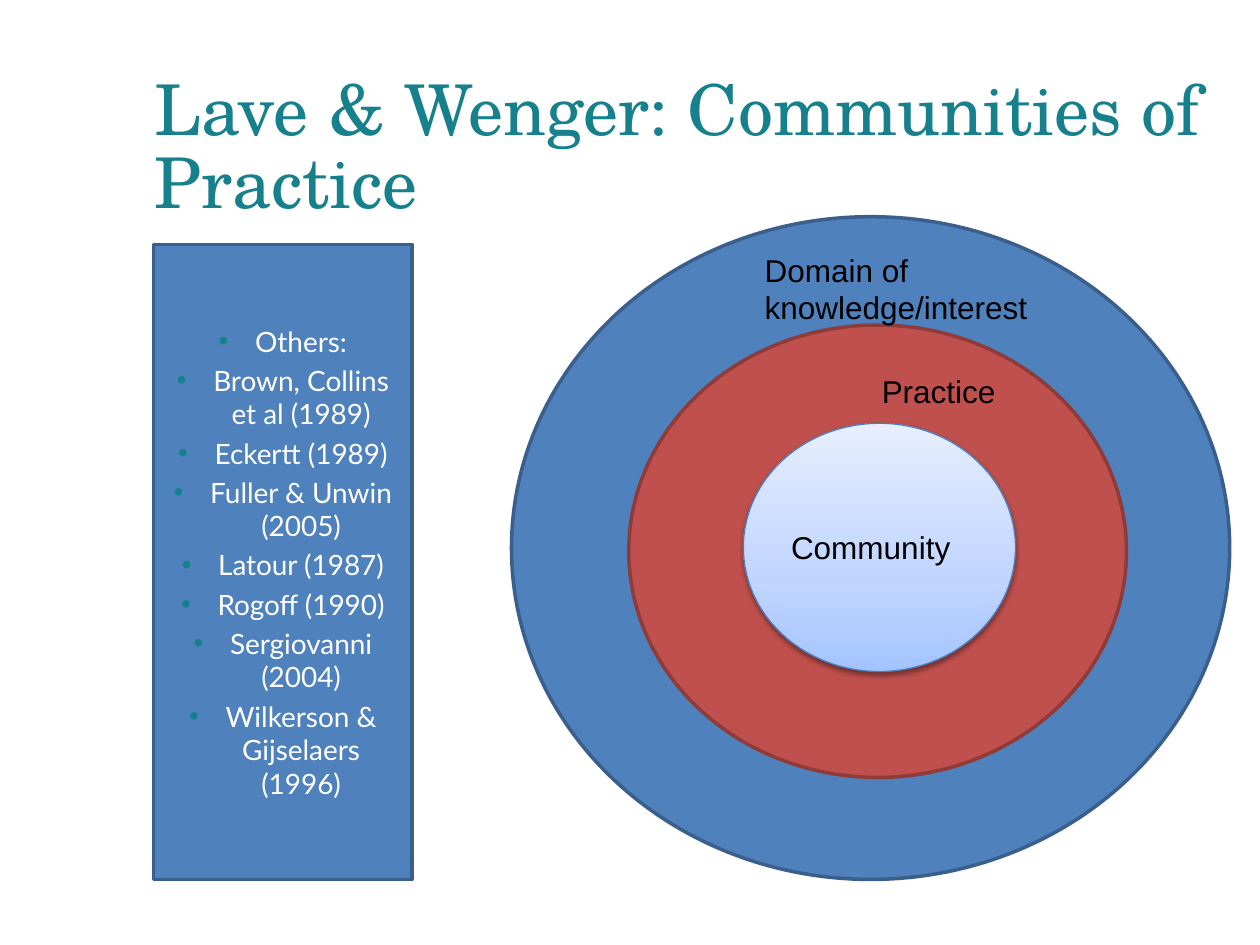
from copy import deepcopy

from lxml import etree
from pptx import Presentation
from pptx.dml.color import RGBColor
from pptx.enum.shapes import MSO_SHAPE
from pptx.enum.text import MSO_ANCHOR, MSO_AUTO_SIZE, PP_ALIGN
from pptx.oxml.ns import qn
from pptx.util import Inches, Pt

CIRCLE = MSO_SHAPE.FLOWCHART_CONNECTOR
TOP, MIDDLE = MSO_ANCHOR.TOP, MSO_ANCHOR.MIDDLE
LEFT, CENTER = PP_ALIGN.LEFT, PP_ALIGN.CENTER
NO_AUTOFIT = MSO_AUTO_SIZE.NONE

TEAL, BLUE, DARK_BLUE = "16818D", "4F81BD", "3A5F8C"
TITLE_FONT = {"name": "TeX Gyre Schola", "size": Pt(40), "color": TEAL}
LIST_FONT = {"name": "Lato", "size": Pt(16), "color": "FFFFFF"}
LABEL_FONT = {"name": "Arial", "size": Pt(18), "color": "000000"}

AUTHORS = [
    "Others:",
    "Brown, Collins et al (1989)",
    "Eckertt (1989)",
    "Fuller & Unwin (2005)",
    "Latour (1987)",
    "Rogoff (1990)",
    "Sergiovanni (2004)",
    "Wilkerson & Gijselaers (1996)",
]
# Positions are relative to the outer circle's box.
RINGS = [
    ((0, 0, 5.7, 5.26), BLUE, DARK_BLUE, 2),
    ((0.93, 0.86, 3.95, 3.59), "C0504D", "8E3B39", 2),
    ((1.84, 1.64, 2.16, 1.97), None, "4B7EBC", 0.75),
]
LABELS = [
    ("Domain of knowledge/interest", (1.91, 0.22, 2.41, 0.71)),
    ("Practice", (2.84, 1.18, 1.57, 0.4)),
    ("Community", (2.12, 2.42, 1.57, 0.4)),
]
CORE_GRADIENT = [(0, "A4C4FF"), (0.35, "BFD4FF"), (1, "E6EEFF")]


def color(value):
    return RGBColor.from_string(value)


def place(shape, box):
    for name, value in zip(("left", "top", "width", "height"), box):
        setattr(shape, name, Inches(value))


def format_font(font, values):
    for name, value in values.items():
        if name == "color":
            font.color.rgb = color(value)
        else:
            setattr(font, name, value)


def outline(shape, line_color, width):
    shape.line.color.rgb = color(line_color)
    shape.line.width = Pt(width)


def add_bullet(paragraph, bullet_color, indent):
    properties = paragraph._p.get_or_add_pPr()
    properties.set("marL", str(indent))
    properties.set("indent", str(-indent))
    holder = etree.SubElement(properties, qn("a:buClr"))
    etree.SubElement(holder, qn("a:srgbClr"), val=bullet_color)
    etree.SubElement(properties, qn("a:buFont"), typeface="Arial")
    etree.SubElement(properties, qn("a:buChar"), char="•")


def fill_gradient(shape, stops):
    """Fill from bottom to top with three stops."""
    shape.fill.gradient()
    shape.fill.gradient_angle = 90
    first = shape._element.spPr.find(".//" + qn("a:gs"))
    first.addnext(deepcopy(first))
    for stop, (position, value) in zip(shape.fill.gradient_stops, stops):
        stop.position = position
        stop.color.rgb = color(value)


def add_soft_shadow(shape):
    effects = shape._element.spPr.find(qn("a:effectLst"))
    shadow = etree.SubElement(
        effects, qn("a:outerShdw"), blurRad=str(Pt(3.1)), dist=str(Pt(1.6)),
        dir="5400000", rotWithShape="0")
    shade = etree.SubElement(shadow, qn("a:srgbClr"), val="000000")
    etree.SubElement(shade, qn("a:alpha"), val="38000")


def fill_title(title, box):
    place(title, box)
    frame = title.text_frame
    frame.text = "Lave & Wenger: Communities of Practice"
    frame.auto_size, frame.vertical_anchor = NO_AUTOFIT, TOP
    for side in ("left", "top", "right", "bottom"):
        setattr(frame, "margin_" + side, 0)
    paragraph = frame.paragraphs[0]
    paragraph.alignment = LEFT
    paragraph.line_spacing = Pt(42)
    format_font(paragraph.font, TITLE_FONT)


def fill_author_list(body, box):
    place(body, box)
    body.fill.solid()
    body.fill.fore_color.rgb = color(BLUE)
    outline(body, DARK_BLUE, 2)
    frame = body.text_frame
    frame.text = "\n".join(AUTHORS)
    frame.auto_size, frame.vertical_anchor = NO_AUTOFIT, MIDDLE
    for index, paragraph in enumerate(frame.paragraphs):
        paragraph.alignment = CENTER
        paragraph.space_before = Pt(3.2 if index else 0)
        add_bullet(paragraph, TEAL, Inches(0.29))
        format_font(paragraph.font, LIST_FONT)


def add_community_circles(slide, left, top):
    def shifted(box):
        x, y, width, height = box
        return [Inches(value) for value in (left + x, top + y, width, height)]

    for box, fill, line_color, line_width in RINGS:
        ring = slide.shapes.add_shape(CIRCLE, *shifted(box))
        ring.shadow.inherit = False
        outline(ring, line_color, line_width)
        if fill:
            ring.fill.solid()
            ring.fill.fore_color.rgb = color(fill)
        else:
            fill_gradient(ring, CORE_GRADIENT)
            add_soft_shadow(ring)

    for text, box in LABELS:
        frame = slide.shapes.add_textbox(*shifted(box)).text_frame
        frame.word_wrap = True
        frame.text = text
        format_font(frame.paragraphs[0].font, LABEL_FONT)


def main():
    presentation = Presentation()
    presentation.slide_width, presentation.slide_height = Inches(10), Inches(7.5)
    slide = presentation.slides.add_slide(presentation.slide_layouts[1])
    fill_title(slide.shapes.title, (1.23, 0.6, 8.43, 0.95))
    fill_author_list(slide.placeholders[1], (1.22, 1.94, 2.05, 5.04))
    add_community_circles(slide, 4.06, 1.72)
    presentation.save("out.pptx")


if __name__ == "__main__":
    main()
